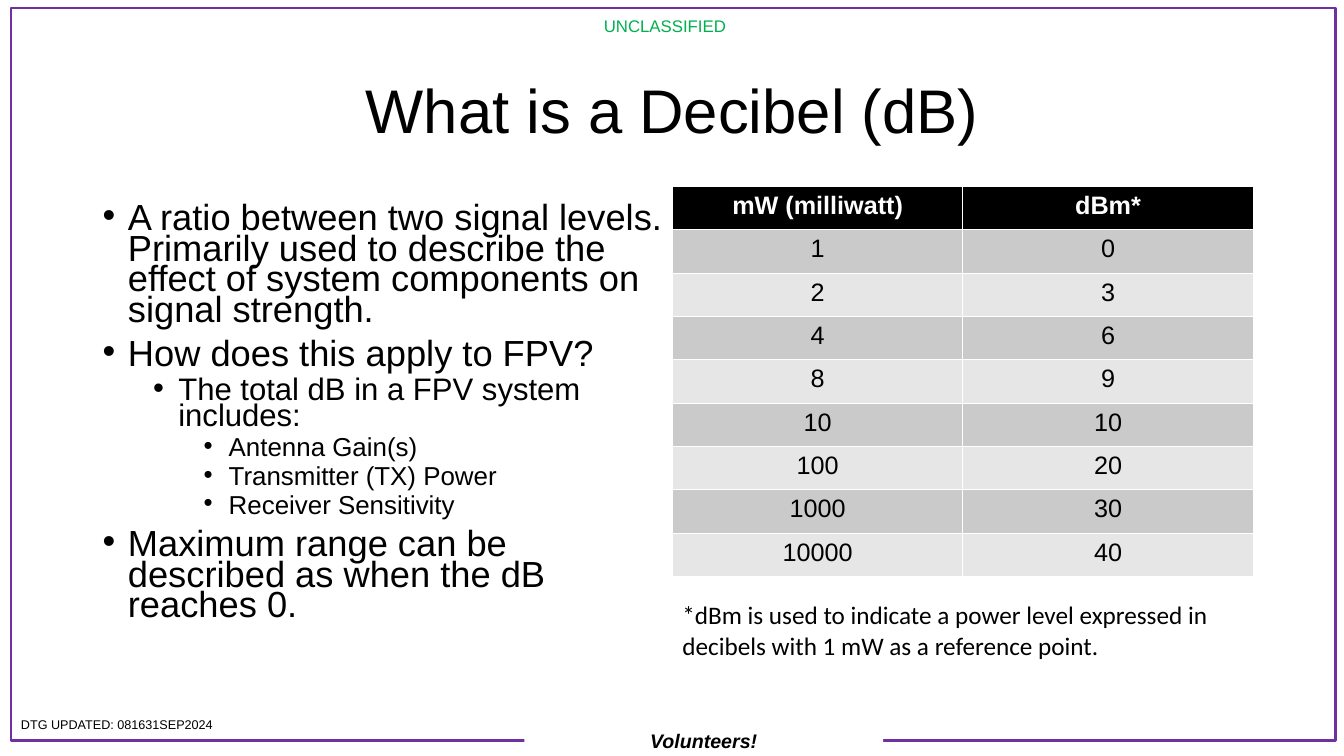
from lxml.etree import SubElement
from pptx import Presentation
from pptx.dml.color import RGBColor
from pptx.enum.shapes import MSO_SHAPE
from pptx.enum.text import MSO_ANCHOR, PP_ALIGN
from pptx.oxml.ns import qn
from pptx.util import Inches, Pt

BLACK = RGBColor(0, 0, 0)
WHITE = RGBColor(255, 255, 255)
PURPLE = RGBColor(0x70, 0x30, 0xA0)
GREEN = RGBColor(0, 0xB0, 0x50)
BANDS = [RGBColor(0xE6, 0xE6, 0xE6), RGBColor(0xCA, 0xCA, 0xCA)]

TITLE = "What is a Decibel (dB)"
POINTS = [
    (0, "A ratio between two signal levels. Primarily used to describe "
        "the effect of system components on signal strength."),
    (0, "How does this apply to FPV?"),
    (1, "The total dB in a FPV system includes:"),
    (2, "Antenna Gain(s)"),
    (2, "Transmitter (TX) Power"),
    (2, "Receiver Sensitivity"),
    (0, "Maximum range can be described as when the dB reaches 0."),
]
SIZES = [25.9, 22.2, 18.5]
GAPS = [10, 5, 5]
POWER = [
    ("mW (milliwatt)", "dBm*"),
    (1, 0), (2, 3), (4, 6), (8, 9),
    (10, 10), (100, 20), (1000, 30), (10000, 40),
]
NOTE = ("*dBm is used to indicate a power level expressed in decibels "
        "with 1 mW as a reference point.")
# text, box, size, font, colour, alignment
LABELS = [
    ("UNCLASSIFIED", (4.75, 0.11, 3.69, 0.3), 12, "Arial", GREEN, PP_ALIGN.CENTER),
    ("DTG UPDATED: 081631SEP2024", (0.11, 7.06, 2.88, 0.25), 9, "Arial", BLACK, PP_ALIGN.LEFT),
    (NOTE, (6.67, 5.9, 5.75, 0.71), 18, "Calibri", BLACK, PP_ALIGN.LEFT),
]


def inches(box):
    return [Inches(n) for n in box]


def style(para, size, color=BLACK, name="Arial", align=PP_ALIGN.CENTER):
    para.alignment = align
    font = para.font
    font.size, font.name = Pt(size), name
    font.color.rgb = color
    return font


def add_rect(slide, box):
    rect = slide.shapes.add_shape(MSO_SHAPE.RECTANGLE, *inches(box))
    rect.shadow.inherit = False
    return rect


def add_text(slide, box):
    frame = slide.shapes.add_textbox(*inches(box)).text_frame
    frame.word_wrap = True
    return frame


def add_bullet(para, level):
    props = para._p.get_or_add_pPr()
    props.set("marL", str(Inches(0.25 + 0.5 * level)))
    props.set("indent", str(-Inches(0.25)))
    SubElement(props, qn("a:buFont"), typeface="Arial")
    SubElement(props, qn("a:buChar"), char="•")


def add_points(slide):
    frame = add_text(slide, (0.92, 2, 5.75, 4.76))
    for i, (level, text) in enumerate(POINTS):
        para = frame.add_paragraph() if i else frame.paragraphs[0]
        para.text = text
        para.level = level
        add_bullet(para, level)
        para.line_spacing = 0.7
        if i:
            para.space_before = Pt(GAPS[level])
        style(para, SIZES[level], align=PP_ALIGN.LEFT)


def add_power(slide):
    count = len(POWER)
    box = inches((6.67, 1.85, 5.76, 0.43 * count))
    table = slide.shapes.add_table(count, 2, *box).table
    for r, row in enumerate(POWER):
        for c, value in enumerate(row):
            cell = table.cell(r, c)
            cell.text = str(value)
            cell.fill.solid()
            cell.fill.fore_color.rgb = BANDS[r % 2] if r else BLACK
            font = style(cell.text_frame.paragraphs[0], 18, BLACK if r else WHITE)
            font.bold = r == 0


def main():
    deck = Presentation()
    deck.slide_width, deck.slide_height = Inches(13.33), Inches(7.5)
    slide = deck.slides.add_slide(deck.slide_layouts[5])

    border = add_rect(slide, (0.11, 0.08, 13.14, 7.27))
    border.fill.background()
    border.line.color.rgb = PURPLE
    border.line.width = Pt(2)

    motto = add_rect(slide, (5.2, 7.18, 3.56, 0.33))
    motto.fill.solid()
    motto.fill.fore_color.rgb = WHITE
    motto.line.fill.background()
    motto.text_frame.text = "Volunteers!"
    font = style(motto.text_frame.paragraphs[0], 14)
    font.bold = font.italic = True

    title = slide.shapes.title
    title.left, title.top, title.width, title.height = inches((0.92, 0.4, 11.5, 1.45))
    title.text_frame.text = TITLE
    title.text_frame.vertical_anchor = MSO_ANCHOR.MIDDLE
    head = title.text_frame.paragraphs[0]
    head.line_spacing = 0.9
    style(head, 44)

    for text, box, size, name, color, align in LABELS:
        frame = add_text(slide, box)
        frame.text = text
        style(frame.paragraphs[0], size, color, name, align)
    add_points(slide)
    add_power(slide)
    deck.save("out.pptx")


if __name__ == "__main__":
    main()
